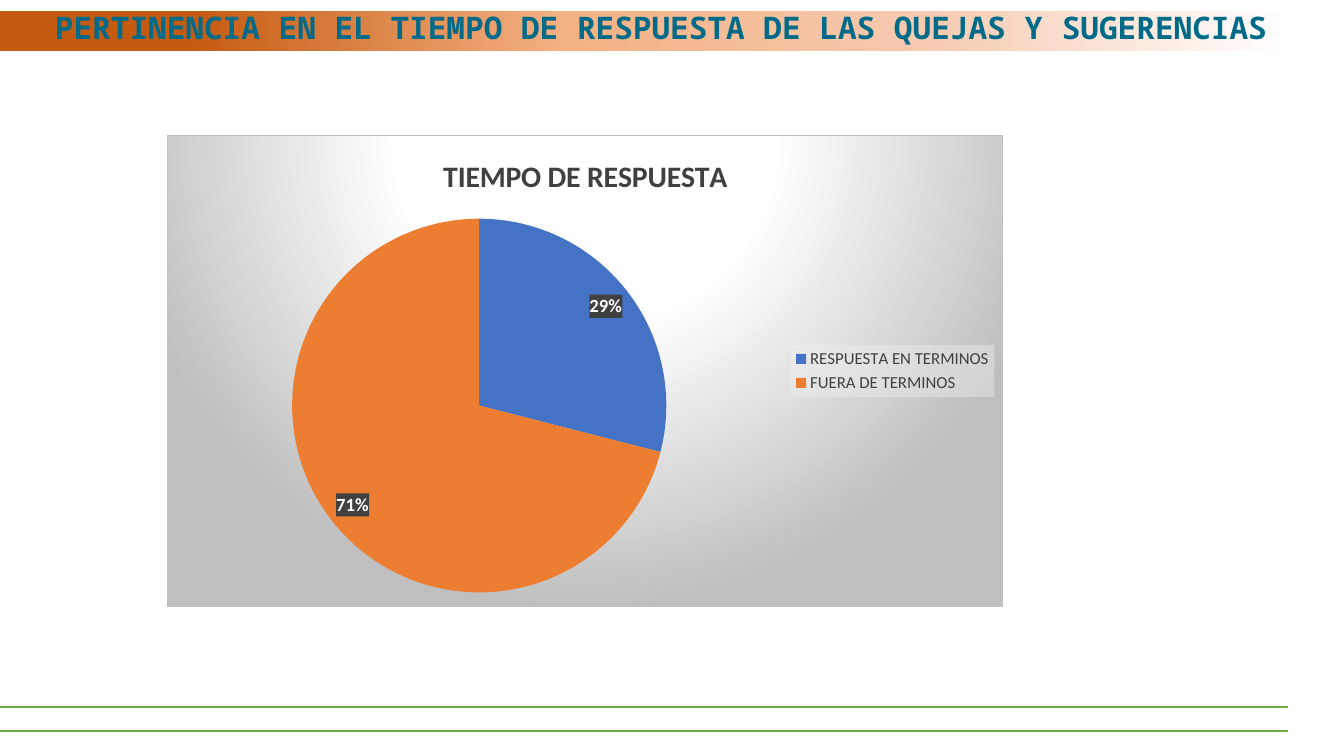
from lxml import etree
from pptx import Presentation
from pptx import util as u
from pptx.chart.data import CategoryChartData
from pptx.dml.color import RGBColor
from pptx.enum import chart as charts, shapes, text
from pptx.oxml import parse_xml
from pptx.oxml.ns import qn

A = "http://schemas.openxmlformats.org/drawingml/2006/main"
C = "http://schemas.openxmlformats.org/drawingml/2006/chart"


def rgb(color):
    return RGBColor.from_string(color)


def solid_xml(color, alpha):
    return (f'<a:solidFill xmlns:a="{A}"><a:srgbClr val="{color}">'
            f'<a:alpha val="{alpha * 1000}"/></a:srgbClr></a:solidFill>')


def gradient_xml(stops, direction):
    stop_list = "".join(f'<a:gs pos="{pos * 1000}"><a:srgbClr val="{color}"/></a:gs>'
                        for pos, color in stops)
    return (f'<a:gradFill xmlns:a="{A}" rotWithShape="1"><a:gsLst>{stop_list}</a:gsLst>'
            f'{direction}</a:gradFill>')


class ReportSlide:
    """Draws the elements of the complaints report on one blank slide."""

    heading_font, chart_font = "Noto Sans Mono", "Calibri"
    heading_color, rule_color = "006B89", "70AD47"
    dark, border = "404040", "BFBFBF"
    slice_colors = ("4472C4", "ED7D31")

    def __init__(self, deck):
        self.slide = deck.slides.add_slide(deck.slide_layouts[6])

    def rule(self, y, right):
        rule = self.slide.shapes.add_connector(
            shapes.MSO_CONNECTOR.STRAIGHT, u.Inches(right), u.Inches(y), 0, u.Inches(y))
        rule.line.color.rgb = rgb(self.rule_color)
        rule.line.width = u.Pt(1.5)
        etree.SubElement(rule._element.spPr, qn("a:effectLst"))

    def band(self, box, stops):
        band = self.slide.shapes.add_shape(
            shapes.MSO_SHAPE.RECTANGLE, *map(u.Inches, box))
        band.shadow.inherit = False
        band.line.fill.background()
        fill = parse_xml(gradient_xml(stops, '<a:lin ang="0" scaled="0"/>'))
        band._element.spPr.find(qn("a:prstGeom")).addnext(fill)

    def heading(self, box, wording):
        frame = self.slide.shapes.add_textbox(*map(u.Inches, box)).text_frame
        frame.word_wrap = True
        frame.vertical_anchor = text.MSO_ANCHOR.TOP
        line = frame.paragraphs[0]
        line.alignment = text.PP_ALIGN.CENTER
        line.line_spacing = 0.8
        run = line.add_run()
        run.text = wording
        self.style(run.font, self.heading_font, 22.2, self.heading_color, True)

    def style(self, font, name, size, color, bold=False):
        font.name, font.size, font.bold = name, u.Pt(size), bold
        font.color.rgb = rgb(color)

    def backdrop(self, part, fill, line="<a:ln><a:noFill/></a:ln>"):
        backdrop = parse_xml(f'<c:spPr xmlns:c="{C}" xmlns:a="{A}">{fill}{line}</c:spPr>')
        part.find(qn("c:txPr")).addprevious(backdrop)

    def pie(self, box, title, shares):
        data = CategoryChartData()
        data.categories = list(shares)
        data.add_series("Series 1", list(shares.values()))
        chart = self.slide.shapes.add_chart(
            charts.XL_CHART_TYPE.PIE, *map(u.Inches, box), data).chart
        self.style(chart.font, self.chart_font, 10, "000000")
        stops = [(0, "FFFFFF"), (39, "FFFFFF"), (100, self.border)]
        glow = ('<a:path path="circle"><a:fillToRect l="50000" t="-80000" '
                'r="50000" b="180000"/></a:path>')
        edge = (f'<a:ln w="9525"><a:solidFill><a:srgbClr val="{self.border}"/>'
                '</a:solidFill></a:ln>')
        self.backdrop(chart._chartSpace, gradient_xml(stops, glow), edge)

        chart.has_title = True
        run = chart.chart_title.text_frame.paragraphs[0].add_run()
        run.text = title
        self.style(run.font, self.chart_font, 21.3, self.dark, True)
        chart.chart_title.include_in_layout = False

        chart.has_legend = True
        legend = chart.legend
        legend.position = charts.XL_LEGEND_POSITION.RIGHT
        legend.include_in_layout = False
        self.style(legend.font, self.chart_font, 12, self.dark)
        self.backdrop(legend._element, solid_xml("F2F2F2", 39))

        plot = chart.plots[0]
        plot.vary_by_categories = True
        series = plot.series[0]
        for index, color in enumerate(self.slice_colors):
            piece = series.points[index].format
            piece.fill.solid()
            piece.fill.fore_color.rgb = rgb(color)
            piece.line.fill.background()

        labels = series.data_labels
        labels.show_percentage, labels.show_value = True, False
        labels.number_format, labels.number_format_is_linked = "0%", False
        labels.position = charts.XL_LABEL_POSITION.INSIDE_END
        self.style(labels.font, self.chart_font, 13.3, "FFFFFF", True)
        self.backdrop(labels._element, solid_xml(self.dark, 90))


def main():
    deck = Presentation()
    deck.slide_width, deck.slide_height = u.Inches(13.33), u.Inches(7.5)
    report = ReportSlide(deck)
    for y in (7.25, 7.01):
        report.rule(y, 12.77)
    report.band((0, 0.11, 13.33, 0.4),
                [(14, "C55A11"), (42, "F4B183"), (69, "F6CAB1"), (96, "FFFFFF")])
    report.heading((0.42, 0.11, 12.46, 0.4),
                   "PERTINENCIA EN EL TIEMPO DE RESPUESTA DE LAS QUEJAS Y SUGERENCIAS ")
    report.pie((1.66, 1.34, 8.29, 4.68), "TIEMPO DE RESPUESTA",
               {"RESPUESTA EN TERMINOS": 29, "FUERA DE TERMINOS": 71})
    deck.save("out.pptx")


if __name__ == "__main__":
    main()
